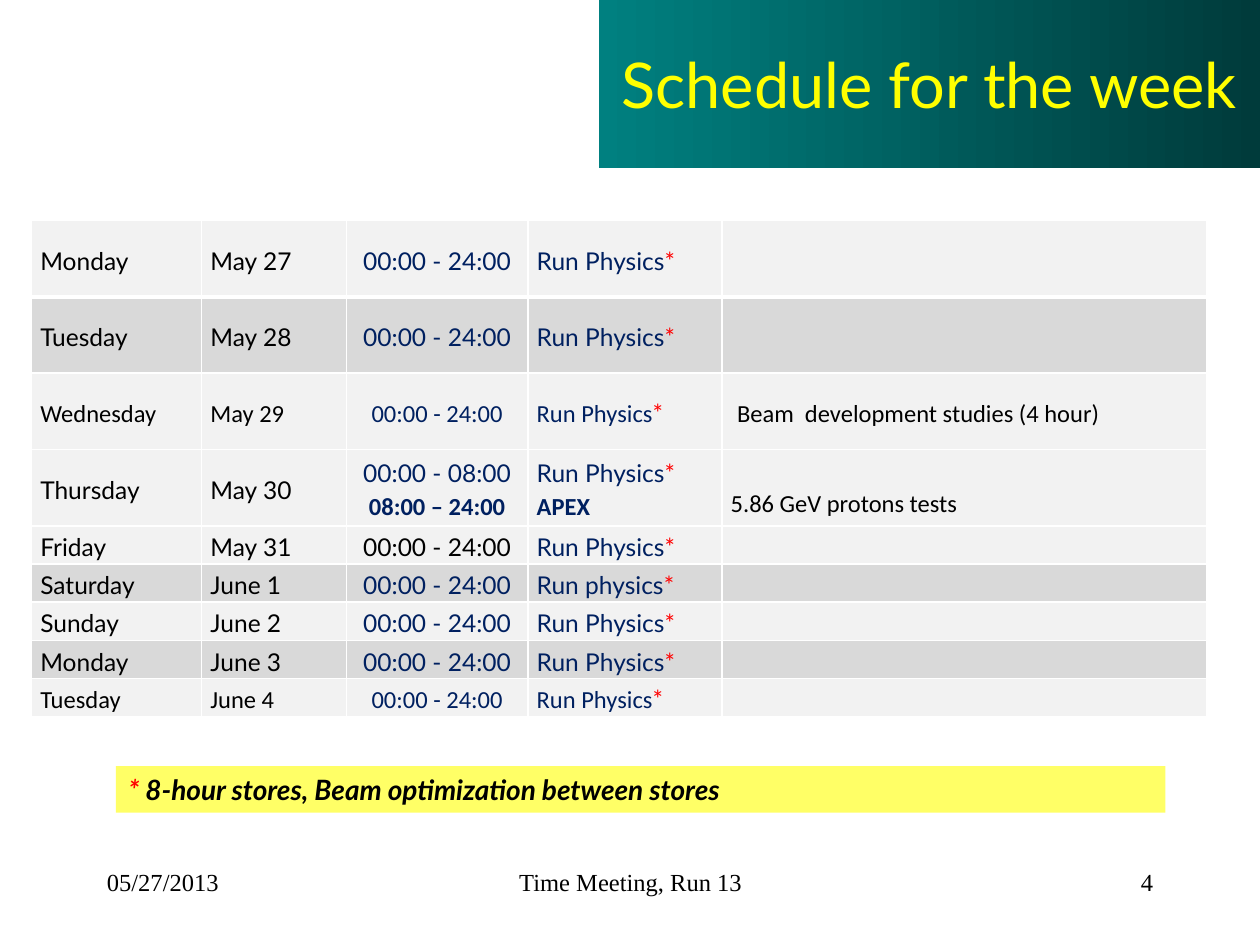
"""Build the weekly schedule slide with its table, note and footer."""
from lxml.etree import SubElement
from pptx import Presentation
from pptx.dml.color import RGBColor
from pptx.enum.shapes import MSO_SHAPE
from pptx.enum.text import MSO_ANCHOR, MSO_AUTO_SIZE, PP_ALIGN
from pptx.oxml.ns import qn
from pptx.util import Inches, Pt

COLORS = {"black": "000000", "white": "FFFFFF", "navy": "002060", "red": "FF0000",
          "yellow": "FFFF00", "note": "FFFF66", "teal": "008080", "dark teal": "003B3B",
          "light": "F2F2F2", "gray": "D9D9D9"}


def add_run(paragraph, text, font="Lato", color="black", size=14, bold=False, italic=False):
    run = paragraph.add_run()
    run.text = text
    run.font.name = font
    run.font.size = Pt(size)
    run.font.bold = bold
    run.font.italic = italic
    run.font.color.rgb = RGBColor.from_string(COLORS[color])


def add_border(cell, side, width):
    line = SubElement(cell._tc.get_or_add_tcPr(), qn(f"a:{side}"), w=str(Pt(width)))
    solid = SubElement(line, qn("a:solidFill"))
    SubElement(solid, qn("a:srgbClr"), val=COLORS["white"])


presentation = Presentation()
presentation.slide_width = Inches(10)
presentation.slide_height = Inches(7.5)
slide = presentation.slides.add_slide(presentation.slide_layouts[5])

title = slide.shapes.title
title.left, title.top = Inches(4.75), 0
title.width, title.height = Inches(5.25), Inches(1.33)
title.fill.gradient()
title.fill.gradient_angle = 0
for stop, color, position in zip(title.fill.gradient_stops, ("teal", "dark teal"), (0, 1)):
    stop.color.rgb = RGBColor.from_string(COLORS[color])
    stop.position = position
title.text_frame.auto_size = MSO_AUTO_SIZE.NONE
title.text_frame.vertical_anchor = MSO_ANCHOR.MIDDLE
paragraph = title.text_frame.paragraphs[0]
paragraph.alignment = PP_ALIGN.CENTER
add_run(paragraph, "Schedule for the week", color="yellow", size=36)

footers = [
    (0.75, 2.08, "05/27/2013", PP_ALIGN.LEFT),
    (3.42, 3.17, "Time Meeting, Run 13", PP_ALIGN.CENTER),
    (7.17, 2.08, "4", PP_ALIGN.RIGHT),
]
for left, width, text, alignment in footers:
    footer = slide.shapes.add_textbox(Inches(left), Inches(6.83), Inches(width), Inches(0.5))
    footer.text_frame.word_wrap = True
    paragraph = footer.text_frame.paragraphs[0]
    paragraph.alignment = alignment
    add_run(paragraph, text, font="Times New Roman")

note = slide.shapes.add_shape(MSO_SHAPE.RECTANGLE, Inches(0.92), Inches(6.08),
                              Inches(8.33), Inches(0.37))
note.shadow.inherit = False
note.fill.solid()
note.fill.fore_color.rgb = RGBColor.from_string(COLORS["note"])
note.line.fill.background()
paragraph = note.text_frame.paragraphs[0]
paragraph.alignment = PP_ALIGN.LEFT
add_run(paragraph, "*", color="red", size=16, bold=True, italic=True)
add_run(paragraph, " 8-hour stores, Beam optimization between stores",
        size=16, bold=True, italic=True)

all_day = "00:00 - 24:00"
physics = "Run Physics"
schedule = [
    ("Monday", "May 27", all_day, physics, "Lato", "navy", "light"),
    ("Tuesday", "May 28", all_day, physics, "Lato", "navy", "gray"),
    ("Wednesday", "May 29", all_day, physics, "Calibri", "navy", "light"),
    ("Thursday", "May 30", "00:00 - 08:00", physics, "Lato", "navy", "light"),
    ("Friday", "May 31", all_day, physics, "Lato", "black", "light"),
    ("Saturday", "June 1", all_day, "Run physics", "Lato", "navy", "gray"),
    ("Sunday", "June 2", all_day, physics, "Lato", "navy", "light"),
    ("Monday", "June 3", all_day, physics, "Lato", "navy", "gray"),
    ("Tuesday", "June 4", all_day, physics, "Calibri", "navy", "light"),
]
second_lines = {(3, 2): "08:00 – 24:00", (3, 3): "APEX"}
remarks = {2: "Beam  development studies (4 hour)", 3: "5.86 GeV protons tests"}
column_widths = [1.35, 1.15, 1.44, 1.54, 3.85]
table_height = Inches(3.94)
row_units = [2] * 4 + [1] * 5

table = slide.shapes.add_table(len(schedule), len(column_widths), Inches(0.25), Inches(1.75),
                               Inches(sum(column_widths)), table_height).table
table.first_row = False
table.horz_banding = False
for column, width in zip(table.columns, column_widths):
    column.width = Inches(width)
for row, units in zip(table.rows, row_units):
    row.height = int(table_height * units / sum(row_units))

for row_index, (day, date, hours, activity, font, hours_color, fill) in enumerate(schedule):
    remark = remarks.get(row_index, "")
    columns = [(day, "black", font), (date, "black", font), (hours, hours_color, font),
               (activity, "navy", font), (remark, "black", "Calibri")]
    for column_index, (text, color, cell_font) in enumerate(columns):
        cell = table.cell(row_index, column_index)
        cell.margin_left = cell.margin_right = Inches(0.07)
        cell.margin_top = cell.margin_bottom = 0
        cell.vertical_anchor = MSO_ANCHOR.MIDDLE
        for side in ("lnL", "lnR", "lnT", "lnB"):
            add_border(cell, side, 3 if row_index == 0 and side == "lnB" else 1)
        cell.fill.solid()
        cell.fill.fore_color.rgb = RGBColor.from_string(COLORS[fill])
        paragraph = cell.text_frame.paragraphs[0]
        if not text:
            SubElement(paragraph._p, qn("a:endParaRPr"), sz="1400")
            continue
        add_run(paragraph, text, cell_font, color)
        if column_index == 3:
            add_run(paragraph, "*", color="red")
        if (row_index, column_index) in second_lines:
            add_run(cell.text_frame.add_paragraph(), second_lines[row_index, column_index],
                    "Calibri", "navy", bold=True)
        for paragraph in cell.text_frame.paragraphs:
            paragraph.line_spacing = 1.15
            paragraph.alignment = PP_ALIGN.CENTER if column_index == 2 else PP_ALIGN.LEFT

table.cell(2, 4).margin_left = Inches(0.12)
table.cell(3, 4).vertical_anchor = MSO_ANCHOR.TOP
table.cell(3, 4).margin_top = Inches(0.28)

presentation.save("out.pptx")
